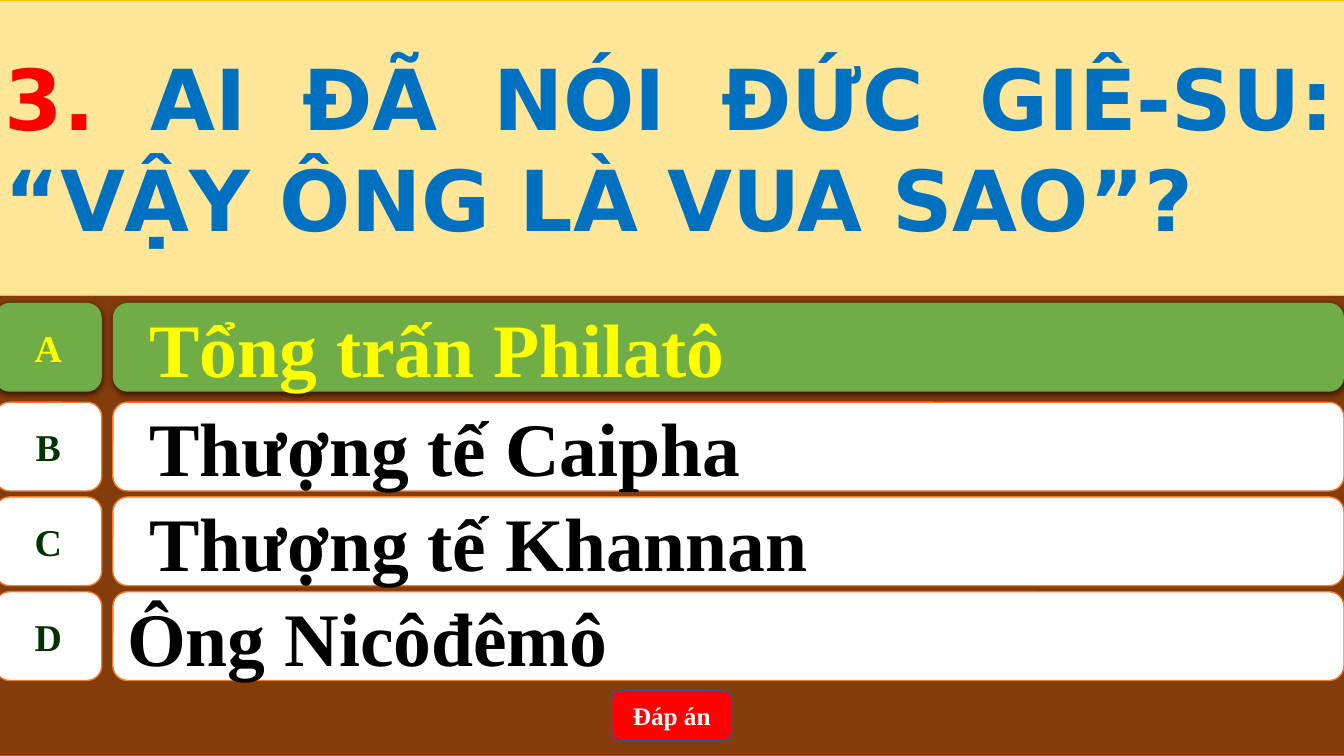
from lxml.etree import SubElement
from pptx import Presentation
from pptx.dml.color import RGBColor
from pptx.enum.shapes import MSO_SHAPE
from pptx.enum.text import MSO_ANCHOR, PP_ALIGN
from pptx.oxml.ns import qn
from pptx.util import Pt

QUESTION = [("3. ", "FF0000"), ("AI ĐÃ NÓI ĐỨC GIÊ-SU: “VẬY ÔNG LÀ VUA SAO”?", "0070C0")]
ANSWERS = [
    ("A", "Tổng trấn Philatô", True),
    ("B", "Thượng tế Caipha", True),
    ("C", "Thượng tế Khannan", True),
    ("D", "Ông Nicôđêmô", False),
]
CORRECT = "A"
BUTTON = "Đáp án"

SLIDE_WIDTH, SLIDE_HEIGHT = 960, 540
LEFT, FULL_WIDTH, QUESTION_HEIGHT = -3.6, 964, 211
CORRECT_TOP, OTHERS_TOP, ROW_PITCH, ROW_HEIGHT = 216.4, 287.28, 67.68, 63.4
LETTER_WIDTH, ANSWER_LEFT = 76.3, 80.6
SERIF, SANS = "Times New Roman", "DejaVu Sans"


def color(value):
    return RGBColor.from_string(value)


def add_block(shapes, kind, box, fill, outline=None, width=1):
    block = shapes.add_shape(kind, *map(Pt, box))
    block.shadow.inherit = False
    block.fill.solid()
    block.fill.fore_color.rgb = color(fill)
    if outline:
        block.line.color.rgb = color(outline)
        block.line.width = Pt(width)
    else:
        block.line.fill.background()
    return block


def write(block, runs, size, font, align=PP_ALIGN.LEFT, wrap=True):
    frame = block.text_frame
    frame.word_wrap = wrap
    frame.vertical_anchor = MSO_ANCHOR.MIDDLE
    paragraph = frame.paragraphs[0]
    paragraph.alignment = align
    paragraph.font.size, paragraph.font.name, paragraph.font.bold = Pt(size), font, True
    for text, ink in runs:
        run = paragraph.add_run()
        run.text = text
        run.font.color.rgb = color(ink)
    return paragraph


def add_shadow(block):
    effects = block._element.spPr.find(qn("a:effectLst"))
    shadow = SubElement(effects, qn("a:outerShdw"), blurRad=str(Pt(4.5)),
                        dist=str(Pt(1.5)), dir="5400000", rotWithShape="0")
    tint = SubElement(shadow, qn("a:srgbClr"), val="000000")
    SubElement(tint, qn("a:alpha"), val="63000")


def add_answer(shapes, index, letter, answer, indented):
    correct = letter == CORRECT
    top = OTHERS_TOP + (index - 1) * ROW_PITCH if index else CORRECT_TOP
    fill, outline = ("70AD47", None) if correct else ("FFFFFF", "ED7D31")
    letter_ink, answer_ink = ("FFFF00", "FFFF00") if correct else ("003300", "000000")
    row = shapes.add_group_shape().shapes

    tab = add_block(row, MSO_SHAPE.FLOWCHART_ALTERNATE_PROCESS,
                    (LEFT, top, LETTER_WIDTH, ROW_HEIGHT), fill, outline)
    write(tab, [(letter, letter_ink)], 27, SERIF, PP_ALIGN.CENTER, wrap=False)

    bar = add_block(row, MSO_SHAPE.ROUNDED_RECTANGLE,
                    (ANSWER_LEFT, top, SLIDE_WIDTH - ANSWER_LEFT, ROW_HEIGHT), fill, outline)
    paragraph = write(bar, [(answer, answer_ink)], 54, SERIF)
    if indented:
        paragraph.level = 1
        properties = paragraph._p.get_or_add_pPr()
        properties.set("marL", str(Pt(36)))
        properties.set("indent", str(Pt(-20)))
    if correct:
        add_shadow(tab)
        add_shadow(bar)


def main():
    """Build the quiz slide with its question, four answers and answer button."""
    deck = Presentation()
    deck.slide_width, deck.slide_height = Pt(SLIDE_WIDTH), Pt(SLIDE_HEIGHT)
    shapes = deck.slides.add_slide(deck.slide_layouts[6]).shapes

    add_block(shapes, MSO_SHAPE.RECTANGLE,
              (LEFT, 0, FULL_WIDTH, SLIDE_HEIGHT), "843C0B", "43739E")
    question = add_block(shapes, MSO_SHAPE.RECTANGLE,
                         (LEFT, 0, FULL_WIDTH, QUESTION_HEIGHT), "FFE699", "FFC000", 0.5)
    write(question, QUESTION, 60, SANS, PP_ALIGN.JUSTIFY)
    for index, (letter, answer, indented) in enumerate(ANSWERS):
        add_answer(shapes, index, letter, answer, indented)
    button = add_block(shapes, MSO_SHAPE.ROUNDED_RECTANGLE,
                       (437, 493.2, 85.7, 36), "FF0000", "325491")
    write(button, [(BUTTON, "FFFFFF")], 18, SERIF, PP_ALIGN.CENTER)

    deck.save("out.pptx")


if __name__ == "__main__":
    main()
